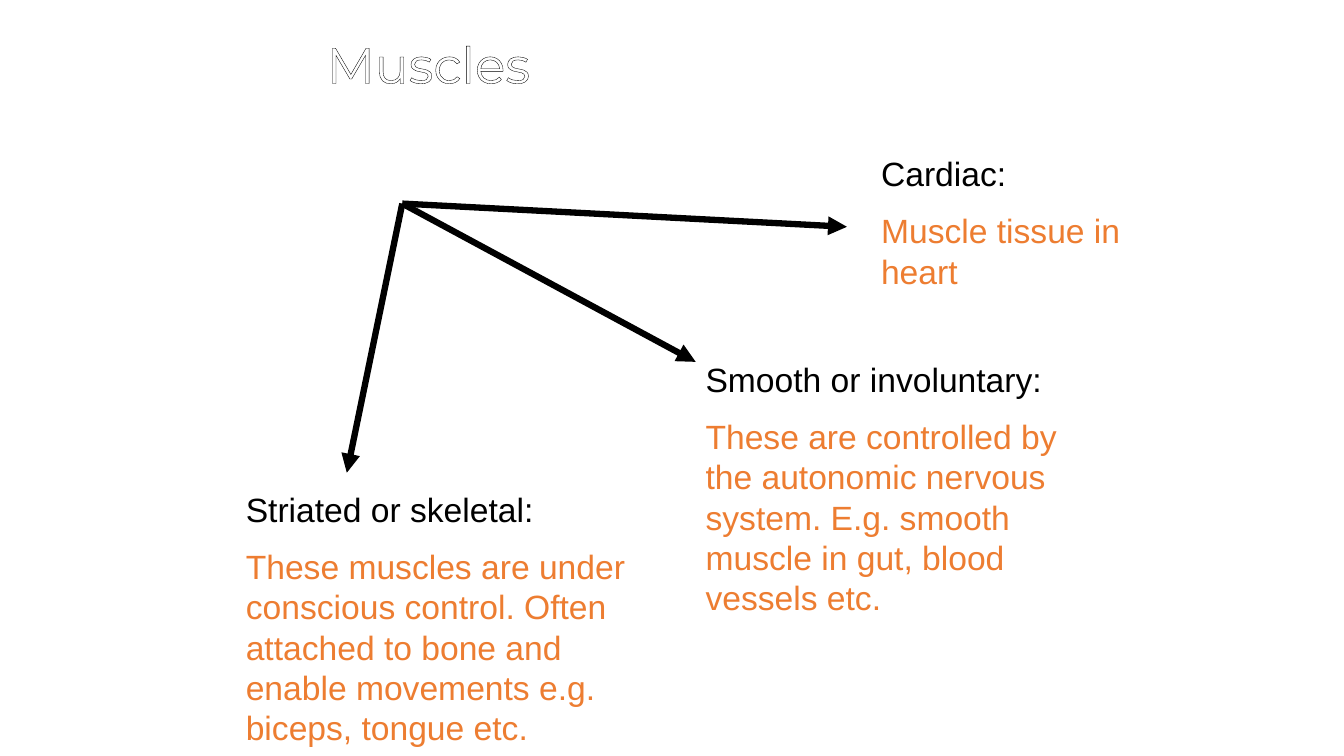
from dataclasses import dataclass

from lxml import etree
from pptx import Presentation
from pptx.dml.color import RGBColor
from pptx.enum.shapes import MSO_CONNECTOR
from pptx.enum.text import MSO_AUTO_SIZE, PP_ALIGN
from pptx.oxml.ns import qn
from pptx.util import Inches, Pt

STRAIGHT = MSO_CONNECTOR.STRAIGHT
CENTER, LEFT = PP_ALIGN.CENTER, PP_ALIGN.LEFT
GROW, FIXED = MSO_AUTO_SIZE.SHAPE_TO_FIT_TEXT, MSO_AUTO_SIZE.NONE


@dataclass(frozen=True)
class Theme:
    black: str = "000000"
    white: str = "FFFFFF"
    orange: str = "ED7D31"
    title_font: str = "Montserrat"
    body_font: str = "Arial"
    title_size: float = 36
    body_size: float = 24
    paragraph_gap: float = 12
    outline_width: float = 0.75
    arrow_width: float = 4.5


THEME = Theme()

# Common start of the arrows
ORIGIN = (3.99, 2.02)

# Heading, description, box (left, top, width, height), arrow tip
MUSCLE_TYPES = [
    ("Striated or skeletal:",
     "These muscles are under conscious control. Often attached to bone "
     "and enable movements e.g. biceps, tongue etc.",
     (2.34, 4.8, 4.13, 2.73), (3.44, 4.69)),
    ("Smooth or involuntary:",
     "These are controlled by the autonomic nervous system. "
     "E.g. smooth muscle in gut, blood vessels etc.",
     (6.9, 3.51, 3.94, 2.73), (6.9, 3.59)),
    ("Cardiac:", "Muscle tissue in heart",
     (8.64, 1.47, 2.98, 1.51), (8.4, 2.25)),
]


def add_box(slide, area, wrap=True, auto_size=GROW):
    frame = slide.shapes.add_textbox(*map(Inches, area)).text_frame
    frame.word_wrap = wrap
    frame.auto_size = auto_size
    return frame


def write(paragraph, text, color, size=THEME.body_size, font=THEME.body_font,
          align=LEFT, space_before=0):
    paragraph.alignment = align
    paragraph.space_before = Pt(space_before)
    run = paragraph.add_run()
    run.text = text
    run.font.name = font
    run.font.size = Pt(size)
    run.font.color.rgb = RGBColor.from_string(color)
    return run


def outline_text(run, color, width):
    outline = etree.Element(qn("a:ln"), w=str(Pt(width)))
    fill = etree.SubElement(outline, qn("a:solidFill"))
    etree.SubElement(fill, qn("a:srgbClr"), val=color)
    run.font._element.insert(0, outline)


def add_title(slide, text):
    frame = add_box(slide, (2.1, 0.28, 4.43, 1.46), wrap=False, auto_size=FIXED)
    title = write(frame.paragraphs[0], text, THEME.white, size=THEME.title_size,
                  font=THEME.title_font, align=CENTER)
    outline_text(title, THEME.black, THEME.outline_width)


def add_muscle_type(slide, heading, description, area):
    frame = add_box(slide, area)
    write(frame.paragraphs[0], heading, THEME.black,
          space_before=THEME.paragraph_gap)
    write(frame.add_paragraph(), description, THEME.orange,
          space_before=THEME.paragraph_gap)


def add_arrow(slide, start, tip):
    arrow = slide.shapes.add_connector(STRAIGHT, *map(Inches, start + tip))
    arrow.line.color.rgb = RGBColor.from_string(THEME.black)
    arrow.line.width = Pt(THEME.arrow_width)
    etree.SubElement(arrow.line._get_or_add_ln(), qn("a:tailEnd"), type="triangle")
    etree.SubElement(arrow._element.spPr, qn("a:effectLst"))


def main():
    deck = Presentation()
    deck.slide_width, deck.slide_height = Inches(13.33), Inches(7.5)
    slide = deck.slides.add_slide(deck.slide_layouts[6])

    add_title(slide, "Muscles ")

    # Descriptions first, arrows in front
    for heading, description, area, _ in MUSCLE_TYPES:
        add_muscle_type(slide, heading, description, area)
    for *_, tip in MUSCLE_TYPES:
        add_arrow(slide, ORIGIN, tip)

    deck.save("out.pptx")


if __name__ == "__main__":
    main()
